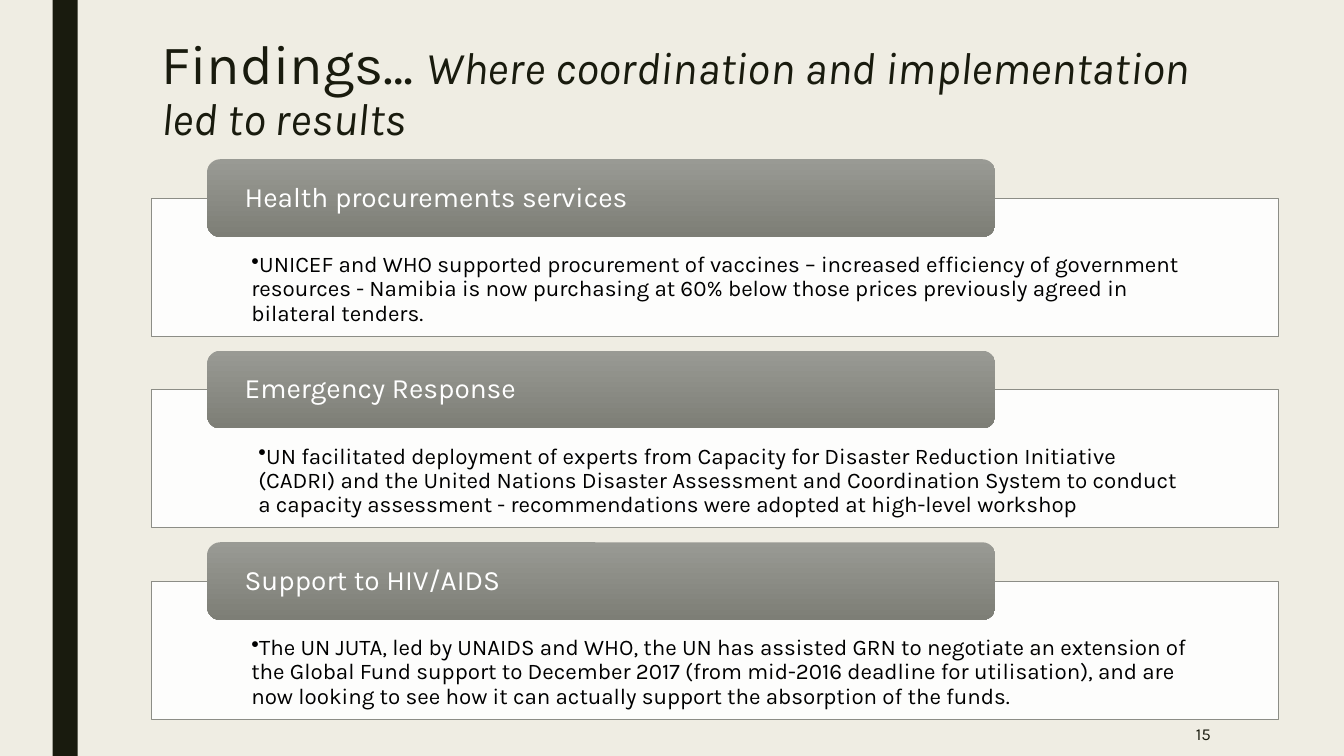
"""Build the findings slide: three headed panels on coordination results."""
import pptx
import pptx.dml.color
import pptx.enum.shapes
import pptx.enum.text
import pptx.oxml
import pptx.oxml.ns
import pptx.util
from dataclasses import dataclass

TITLE = "Findings… "
SUBTITLE = "Where coordination and implementation led to results"
PAGE = "15"
FINDINGS = [
    {
        "head": "Health procurements services",
        "body": "UNICEF and WHO supported procurement of vaccines – increased efficiency of "
                "government resources - Namibia is now purchasing at 60% below those prices "
                "previously agreed in bilateral tenders.",
        "indent": 9,
    },
    {
        "head": "Emergency Response",
        "body": "UN facilitated deployment of experts from Capacity for Disaster Reduction "
                "Initiative (CADRI) and the United Nations Disaster Assessment and Coordination "
                "System to conduct a capacity assessment - recommendations were adopted at "
                "high-level workshop",
        "indent": 14,
    },
    {
        "head": "Support to HIV/AIDS",
        "body": "The UN JUTA, led by UNAIDS and WHO, the UN has assisted GRN to negotiate an "
                "extension of the Global Fund support to December 2017 (from mid-2016 deadline "
                "for utilisation), and are now looking to see how it can actually support the "
                "absorption of the funds.",
        "indent": 9,
    },
]


@dataclass(frozen=True)
class Theme:
    """Colours, font and type sizes."""
    font: str = "Karla"
    back: str = "EFEDE3"
    dark: str = "191B0E"
    panel: str = "FFFFFF"
    edge: str = "8C8D86"
    tab_top: str = "999A94"
    tab_bottom: str = "7D7E76"
    body_ink: str = "000000"
    tab_ink: str = "FFFFFF"
    title: float = 39.6
    subtitle: float = 32.4
    head: float = 20
    body: float = 16
    page: float = 12


THEME = Theme()
Pt = pptx.util.Pt
SHAPES = pptx.enum.shapes.MSO_SHAPE
ANCHOR = pptx.enum.text.MSO_ANCHOR
ALIGN = pptx.enum.text.PP_ALIGN

PANEL_LEFT, PANEL_TOP, PANEL_W, PANEL_H = 108, 141.5, 805, 98.5
PITCH = 136.8
TAB_LEFT, TAB_W, TAB_H = 148, 563, 55.5
TAB_RISE = TAB_H / 2


def rgb(code):
    """Return a colour from its hex code."""
    return pptx.dml.color.RGBColor.from_string(code)


def add_text(tf, text, size, color, italic=False, align=ALIGN.LEFT, anchor=ANCHOR.TOP,
             spacing=None, insets=(7.2, 3.6, 7.2, 3.6)):
    """Append a formatted run to the first paragraph and return the paragraph."""
    tf.word_wrap = True
    tf.auto_size = pptx.enum.text.MSO_AUTO_SIZE.NONE
    tf.vertical_anchor = anchor
    tf.margin_left, tf.margin_top, tf.margin_right, tf.margin_bottom = map(Pt, insets)
    p = tf.paragraphs[0]
    p.alignment = align
    p.line_spacing = spacing
    r = p.add_run()
    r.text = text
    r.font.name = THEME.font
    r.font.size = Pt(size)
    r.font.italic = italic
    r.font.color.rgb = rgb(color)
    return p


def add_box(s, kind, left, top, width, height, fill):
    """Add a flat shape with a solid fill and no line."""
    sp = s.shapes.add_shape(kind, Pt(left), Pt(top), Pt(width), Pt(height))
    sp.shadow.inherit = False
    sp.fill.solid()
    sp.fill.fore_color.rgb = rgb(fill)
    sp.line.fill.background()
    return sp


def add_bullet(p, indent):
    """Give a paragraph a round bullet and a left indent."""
    ppr = p._p.get_or_add_pPr()
    ppr.set("marL", str(Pt(indent)))
    ppr.set("indent", "0")
    pptx.oxml.ns.qn("a:buChar")
    ppr.append(pptx.oxml.parse_xml(
        f'<a:buChar {pptx.oxml.ns.nsdecls("a")} char="•"/>'))


def add_panel(s, top, body, indent):
    """Add a translucent white panel with its bulleted finding."""
    sp = add_box(s, SHAPES.RECTANGLE, PANEL_LEFT, top, PANEL_W, PANEL_H, THEME.panel)
    color = sp.fill._xPr.find(".//" + pptx.oxml.ns.qn("a:srgbClr"))
    color.append(pptx.oxml.parse_xml(
        f'<a:alpha {pptx.oxml.ns.nsdecls("a")} val="90000"/>'))
    sp.line.color.rgb = rgb(THEME.edge)
    sp.line.width = Pt(0.5)
    p = add_text(sp.text_frame, body, THEME.body, THEME.body_ink, spacing=0.9,
                 insets=(62.5, 39.5, 62.5, 8.5))
    add_bullet(p, indent)


def add_tab(s, top, head):
    """Add the rounded gradient heading of a panel."""
    sp = add_box(s, SHAPES.ROUNDED_RECTANGLE, TAB_LEFT, top, TAB_W, TAB_H, THEME.edge)
    sp.fill.gradient()
    sp.fill.gradient_angle = 270
    for stop, code in zip(sp.fill.gradient_stops, (THEME.tab_top, THEME.tab_bottom)):
        stop.color.rgb = rgb(code)
    add_text(sp.text_frame, head, THEME.head, THEME.tab_ink, anchor=ANCHOR.MIDDLE,
             spacing=0.9, insets=(24, 0, 24, 0))


def main():
    """Build and save the slide."""
    prs = pptx.Presentation()
    prs.slide_width, prs.slide_height = Pt(960), Pt(540)
    s = prs.slides.add_slide(prs.slide_layouts[5])
    s.background.fill.solid()
    s.background.fill.fore_color.rgb = rgb(THEME.back)
    add_box(s, SHAPES.RECTANGLE, 37.5, 0, 18, 540, THEME.dark)

    title = s.shapes.title
    title.left, title.top, title.width, title.height = Pt(108), Pt(23), Pt(756), Pt(56)
    add_text(title.text_frame, TITLE, THEME.title, THEME.dark, spacing=0.89)
    add_text(title.text_frame, SUBTITLE, THEME.subtitle, THEME.dark, italic=True, spacing=0.89)

    for i, finding in enumerate(FINDINGS):
        top = PANEL_TOP + i * PITCH
        add_panel(s, top, finding["body"], finding["indent"])
        add_tab(s, top - TAB_RISE, finding["head"])

    page = s.shapes.add_textbox(Pt(746), Pt(508.5), Pt(126), Pt(31.5))
    add_text(page.text_frame, PAGE, THEME.page, THEME.dark, align=ALIGN.RIGHT,
             anchor=ANCHOR.MIDDLE)
    prs.save("out.pptx")


if __name__ == "__main__":
    main()
